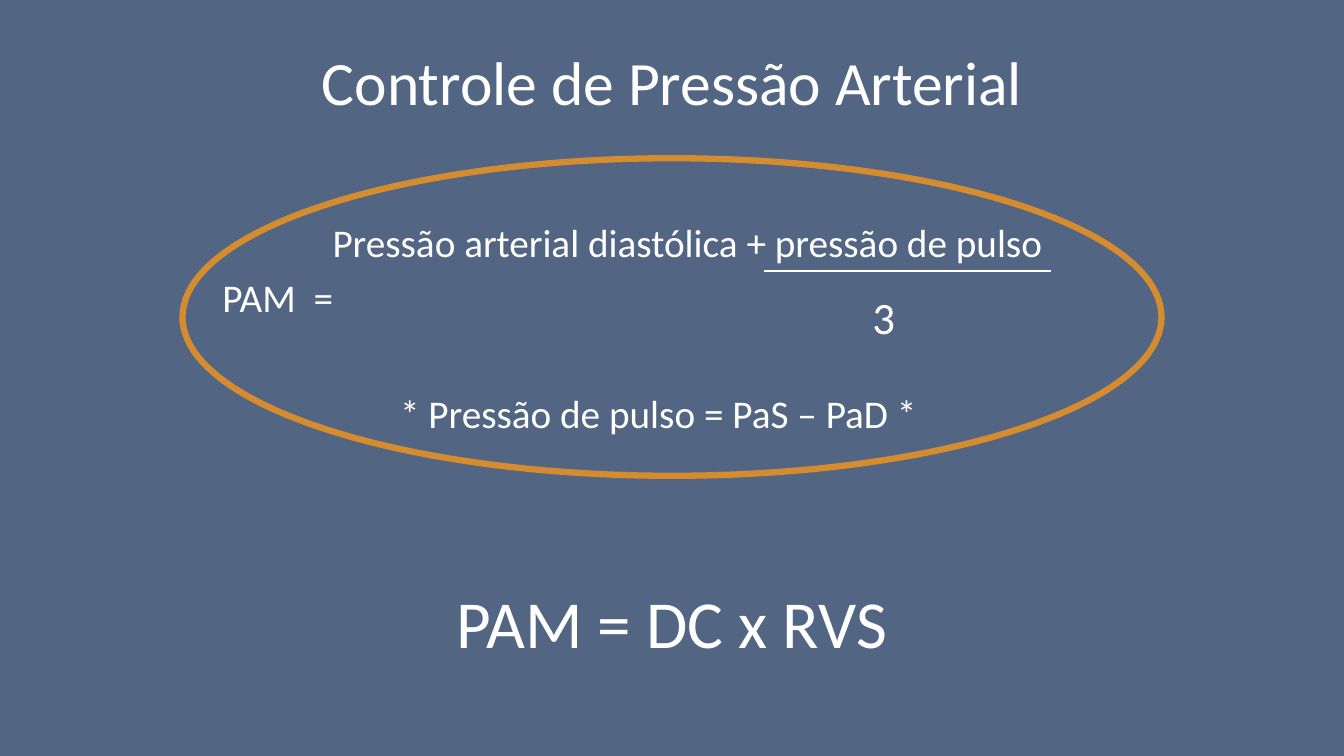
from dataclasses import dataclass

from lxml.etree import SubElement
from pptx import Presentation
from pptx.dml.color import RGBColor
from pptx.enum.shapes import MSO_CONNECTOR, MSO_SHAPE
from pptx.enum.text import MSO_ANCHOR, PP_ALIGN
from pptx.oxml.ns import qn
from pptx.slide import Slide
from pptx.text.text import TextFrame
from pptx.util import Inches, Pt

BACKGROUND = RGBColor(0x52, 0x65, 0x82)
WHITE = RGBColor(0xFF, 0xFF, 0xFF)
ORANGE = RGBColor(0xD5, 0x8C, 0x2E)
FONT = "Calibri"


@dataclass(frozen=True)
class Label:
    text: str
    left: float
    top: float
    width: float
    height: float
    size: int = 28
    align: PP_ALIGN = PP_ALIGN.CENTER


LABELS = [
    Label("Pressão arterial diastólica + pressão de pulso", 3.2, 2.12, 7.37, 0.57,
          align=PP_ALIGN.LEFT),
    Label("3", 8.2, 2.83, 1.13, 0.64, size=32),
    Label("PAM  =", 2.06, 2.66, 1.39, 0.57),
    Label("* Pressão de pulso = PaS – PaD *", 3.87, 3.81, 5.4, 0.57,
          align=PP_ALIGN.LEFT),
    Label("PAM = DC x RVS", 3.7, 5.72, 5.93, 0.91, size=48),
]


def write_text(frame: TextFrame, text: str, size: int, align: PP_ALIGN) -> None:
    frame.text = text
    frame.word_wrap = True
    para = frame.paragraphs[0]
    para.alignment = align
    font = para.runs[0].font
    font.name = FONT
    font.size = Pt(size)
    font.color.rgb = WHITE


def add_label(page: Slide, label: Label) -> None:
    box = page.shapes.add_textbox(Inches(label.left), Inches(label.top),
                                  Inches(label.width), Inches(label.height))
    write_text(box.text_frame, label.text, label.size, label.align)


def add_title(page: Slide, text: str) -> None:
    title = page.shapes.title
    title.left, title.top = Inches(0.92), Inches(0.12)
    title.width, title.height = Inches(11.5), Inches(1.45)
    write_text(title.text_frame, text, 44, PP_ALIGN.CENTER)
    title.text_frame.vertical_anchor = MSO_ANCHOR.MIDDLE
    title.text_frame.paragraphs[0].line_spacing = 0.9


def add_fraction_bar(page: Slide) -> None:
    bar = page.shapes.add_connector(MSO_CONNECTOR.STRAIGHT, Inches(7.58), Inches(2.69),
                                    Inches(10.42), Inches(2.69))
    bar.line.color.rgb = WHITE
    bar.line.width = Pt(1.5)
    SubElement(bar._element.spPr, qn("a:effectLst"))


def add_formula_ring(page: Slide) -> None:
    ring = page.shapes.add_shape(MSO_SHAPE.OVAL, Inches(1.81), Inches(1.57),
                                 Inches(9.71), Inches(3.15))
    ring.shadow.inherit = False
    ring.fill.background()
    ring.line.color.rgb = ORANGE
    ring.line.width = Pt(4.5)


def main() -> None:
    deck = Presentation()
    deck.slide_width, deck.slide_height = Inches(13.33), Inches(7.5)
    page = deck.slides.add_slide(deck.slide_layouts[5])
    page.background.fill.solid()
    page.background.fill.fore_color.rgb = BACKGROUND

    # Title
    add_title(page, "Controle de Pressão Arterial")

    # Ring and fraction bar of the pressure formula
    add_formula_ring(page)
    add_fraction_bar(page)

    # Formula texts
    for label in LABELS:
        add_label(page, label)

    deck.save("out.pptx")


if __name__ == "__main__":
    main()
